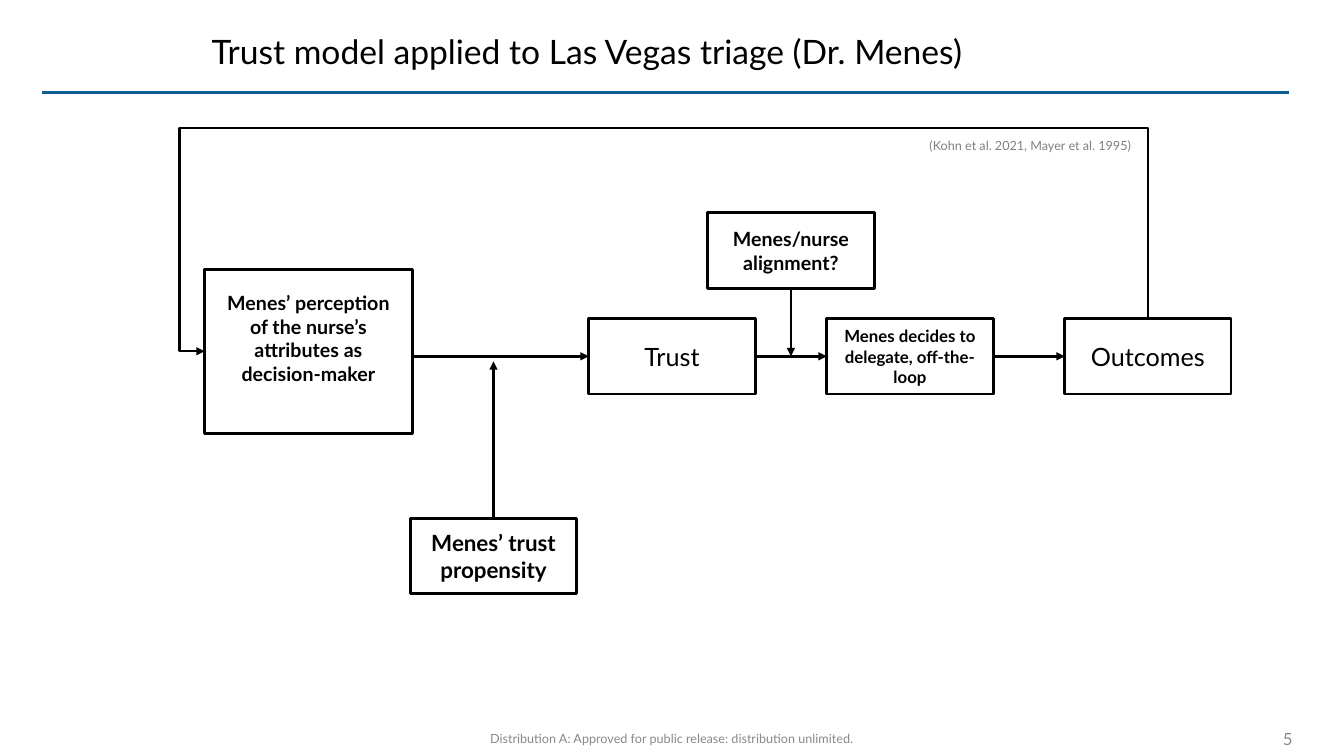
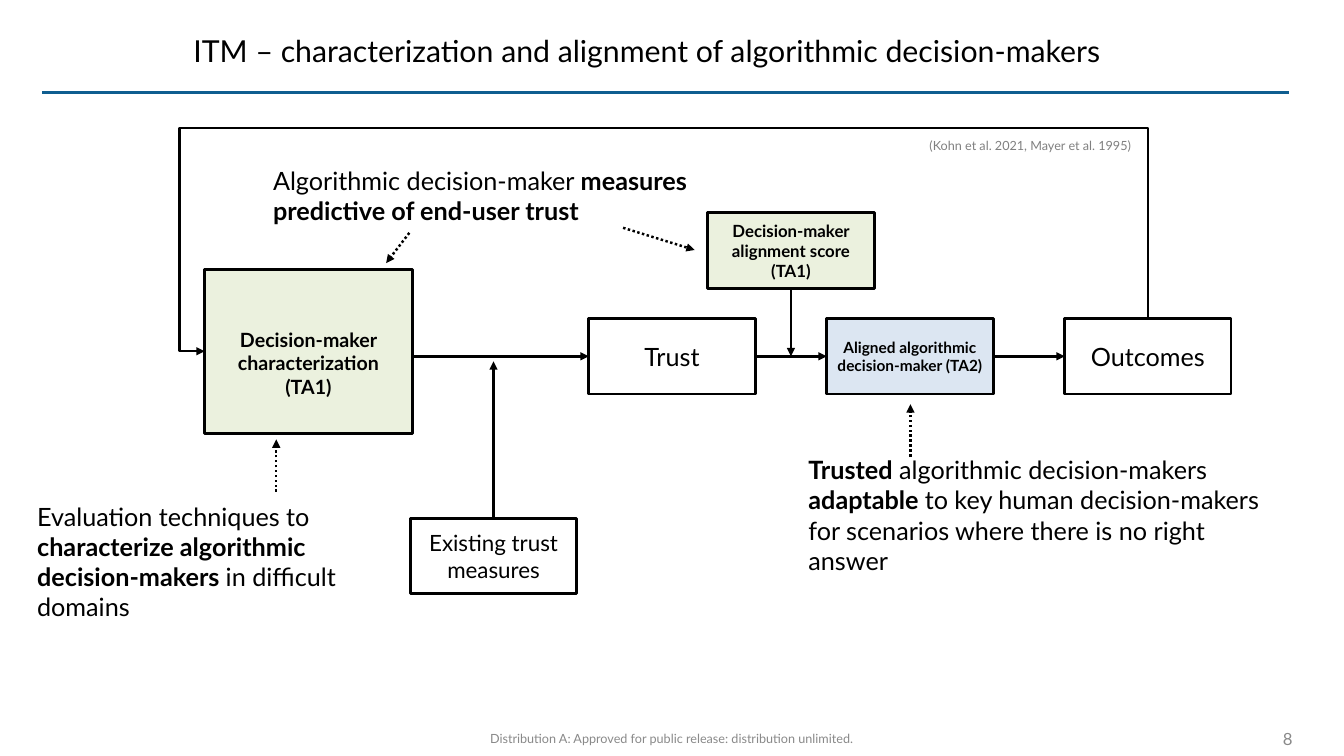
from lxml import etree
from pptx import Presentation
from pptx.dml.color import RGBColor
from pptx.enum.dml import MSO_LINE
from pptx.enum.shapes import MSO_CONNECTOR, MSO_SHAPE
from pptx.enum.text import MSO_ANCHOR, PP_ALIGN
from pptx.oxml.ns import qn
from pptx.util import Inches, Pt

STRAIGHT, RECTANGLE = MSO_CONNECTOR.STRAIGHT, MSO_SHAPE.RECTANGLE
DOTTED = MSO_LINE.ROUND_DOT
LEFT, CENTER, RIGHT = PP_ALIGN.LEFT, PP_ALIGN.CENTER, PP_ALIGN.RIGHT
TOP, MIDDLE = MSO_ANCHOR.TOP, MSO_ANCHOR.MIDDLE

BLACK = RGBColor(0x00, 0x00, 0x00)
WHITE = RGBColor(0xFF, 0xFF, 0xFF)
RULE_BLUE = RGBColor(0x0F, 0x5E, 0x90)
FOOTER_GREY = RGBColor(0x89, 0x89, 0x89)
CITATION_GREY = RGBColor(0x80, 0x80, 0x80)
TA1_GREEN = RGBColor(0xEB, 0xF1, 0xDE)
TA2_BLUE = RGBColor(0xDC, 0xE6, 0xF2)
FONT = "Lato"

# Grid of the trust model: equal boxes in columns, one flow line through the middle row
BOX_W, BOX_H = 1.65, 0.75
FIRST_COLUMN, COLUMN_STEP = 5.84, 2.36
UPPER_ROW, FLOW_ROW, LOWER_ROW = 2.11, 3.16, 5.14
TRUST, ALIGNMENT, DECISION, OUTCOMES, PROPENSITY = [
    FIRST_COLUMN + COLUMN_STEP * share for share in (0, 0.5, 1, 2, -0.75)]
FLOW_Y = FLOW_ROW + BOX_H / 2
PERCEPTION = (2.03, 2.67, 2.06, 1.63)
PERCEPTION_RIGHT = PERCEPTION[0] + PERCEPTION[2]
PERCEPTION_Y = PERCEPTION[1] + PERCEPTION[3] / 2

MODEL_ARROWS = [
    (PERCEPTION_RIGHT, FLOW_Y, TRUST, FLOW_Y),
    (TRUST + BOX_W, FLOW_Y, DECISION, FLOW_Y),
    (DECISION + BOX_W, FLOW_Y, OUTCOMES, FLOW_Y),
    (ALIGNMENT + BOX_W / 2, UPPER_ROW + BOX_H, ALIGNMENT + BOX_W / 2, FLOW_Y),
    (PROPENSITY + BOX_W / 2, LOWER_ROW, PROPENSITY + BOX_W / 2, FLOW_Y + 0.05),
]
OUTCOMES_X = OUTCOMES + BOX_W / 2
FEEDBACK_LOOP = [(OUTCOMES_X, FLOW_ROW), (OUTCOMES_X, 1.27), (1.78, 1.27),
                 (1.78, PERCEPTION_Y), (PERCEPTION[0], PERCEPTION_Y)]

# Boxes: runs of (text, bold), size, fill; callouts: place, runs; hints: dotted arrows
SLIDES = [
    {
        "title": "Trust model applied to Las Vegas triage (Dr. Menes)",
        "title_left": 2, "title_size": 24, "number": "5",
        "perception": ("Menes’ perception of the nurse’s attributes as decision-maker",
                       WHITE, 0.22),
        "propensity": ([("Menes’ trust propensity", True)], 16, WHITE),
        "alignment": ([("Menes/nurse alignment?", True)], 14, WHITE),
        "decision": ([("Menes decides to delegate, off-the-loop", True)], 12, WHITE),
        "callouts": [],
        "hints": [],
    },
    {
        "title": "ITM – characterization and alignment of algorithmic decision-makers",
        "title_left": 1.82, "title_size": 21.6, "number": "8",
        "perception": ("Decision-maker characterization (TA1)", TA1_GREEN, 0.58),
        "propensity": ([("Existing trust measures", False)], 16, WHITE),
        "alignment": ([("Decision-maker alignment score (TA1)", True)], 12, TA1_GREEN),
        "decision": ([("Aligned algorithmic decision-maker (TA2)", True)], 11, TA2_BLUE),
        "callouts": [
            ((0.27, 4.92, 3.56, 1.31), [
                ("Evaluation techniques to ", False),
                ("characterize algorithmic decision-makers ", True),
                ("in difficult domains", False)]),
            ((2.61, 1.59, 4.56, 0.71), [
                ("Algorithmic decision-maker ", False),
                ("measures predictive of end-user trust", True)]),
            ((7.92, 4.46, 4.86, 1.62), [
                ("Trusted", True),
                (" algorithmic decision-makers ", False),
                ("adaptable ", True),
                ("to key human decision-makers for scenarios where there is "
                 "no right answer", False)]),
        ],
        "hints": [(2.74, 4.88, 2.74, 4.36), (4.06, 2.31, 3.83, 2.61),
                  (6.18, 2.26, 6.89, 2.48), (9.03, 4.53, 9.03, 4.01)],
    },
]


def write(shape, runs, size, color=BLACK, align=LEFT, anchor=TOP, **frame_format):
    """Fill a shape with one paragraph of (text, bold) runs."""
    frame = shape.text_frame
    frame_format.update(word_wrap=True, vertical_anchor=anchor)
    for attribute, value in frame_format.items():
        setattr(frame, attribute, value)
    paragraph = frame.paragraphs[0]
    paragraph.alignment = align
    for text, bold in runs:
        run = paragraph.add_run()
        run.text = text
        run.font.color.rgb = color
        for attribute, value in {"name": FONT, "size": Pt(size), "bold": bold}.items():
            setattr(run.font, attribute, value)


def draw_line(line_shape, color=BLACK, dash=None, arrow=True):
    """Give a line its colour, dash and arrowhead, and no shadow."""
    line_shape.line.color.rgb = color
    line_shape.line.width = Pt(1.75)
    if dash:
        line_shape.line.dash_style = dash
    properties = line_shape._element.spPr
    if arrow:
        etree.SubElement(properties.find(qn("a:ln")), qn("a:tailEnd"), type="triangle")
    etree.SubElement(properties, qn("a:effectLst"))


prs = Presentation()
prs.slide_width, prs.slide_height = Inches(13.33), Inches(7.5)
blank = prs.slide_layouts[6]

for content in SLIDES:
    shapes = prs.slides.add_slide(blank).shapes

    # Title, rule, citation, footer and page number
    rule = shapes.add_connector(STRAIGHT, *map(Inches, (0.42, 0.92, 12.78, 0.92)))
    draw_line(rule, RULE_BLUE, arrow=False)
    title_left = content["title_left"]
    for place, text, size, color, align, anchor in [
        ((title_left, 0.17, 12.78 - title_left, 0.67), content["title"],
         content["title_size"], BLACK, LEFT, MIDDLE),
        ((9.12, 1.32, 2.27, 0.25), "(Kohn et al. 2021, Mayer et al. 1995)",
         9, CITATION_GREY, LEFT, TOP),
        ((1.94, 7.16, 9.44, 0.33),
         "Distribution A: Approved for public release: distribution unlimited.",
         9, FOOTER_GREY, CENTER, MIDDLE),
        ((11.81, 7.17, 1.11, 0.32), content["number"], 12, FOOTER_GREY, RIGHT, MIDDLE),
    ]:
        label = shapes.add_textbox(*map(Inches, place))
        write(label, [(text, False)], size, color, align, anchor)

    # Boxes of the trust model
    perception_text, perception_fill, perception_top = content["perception"]
    perception_frame = {"anchor": TOP, "margin_top": Inches(perception_top),
                        "margin_left": Inches(0.22), "margin_right": Inches(0.22)}
    boxes = [(PERCEPTION, ([(perception_text, True)], 14, perception_fill),
              perception_frame)]
    for column, row, step in [
        (TRUST, FLOW_ROW, ([("Trust", False)], 18, WHITE)),
        (OUTCOMES, FLOW_ROW, ([("Outcomes", False)], 18, WHITE)),
        (PROPENSITY, LOWER_ROW, content["propensity"]),
        (ALIGNMENT, UPPER_ROW, content["alignment"]),
        (DECISION, FLOW_ROW, content["decision"]),
    ]:
        boxes.append(((column, row, BOX_W, BOX_H), step, {"anchor": MIDDLE}))
    for place, (runs, size, fill), frame_format in boxes:
        box = shapes.add_shape(RECTANGLE, *map(Inches, place))
        box.shadow.inherit = False
        box.fill.solid()
        box.fill.fore_color.rgb = fill
        box.line.color.rgb = BLACK
        box.line.width = Pt(2)
        write(box, runs, size, align=CENTER, **frame_format)

    # Feedback loop from the outcomes to the perception
    loop_points = [(Inches(x), Inches(y)) for x, y in FEEDBACK_LOOP]
    outline = shapes.build_freeform(*loop_points[0])
    outline.add_line_segments(loop_points[1:], close=False)
    feedback = outline.convert_to_shape()
    feedback.fill.background()
    draw_line(feedback)

    # Callouts, then solid model arrows and dotted hints
    for place, runs in content["callouts"]:
        write(shapes.add_textbox(*map(Inches, place)), runs, 18)
    for ends, dash in ([(ends, None) for ends in MODEL_ARROWS]
                       + [(ends, DOTTED) for ends in content["hints"]]):
        draw_line(shapes.add_connector(STRAIGHT, *map(Inches, ends)), dash=dash)

prs.save("out.pptx")
